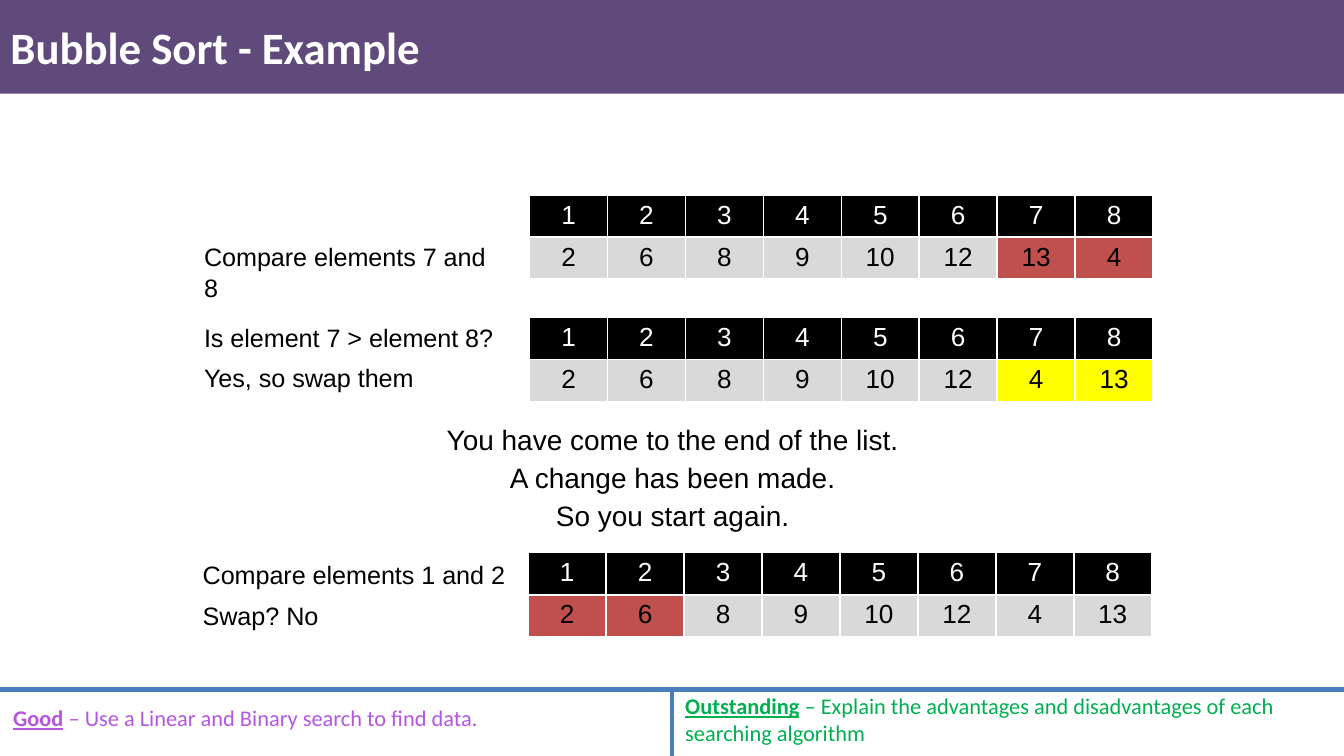
from dataclasses import dataclass

from lxml.etree import SubElement
from pptx import Presentation
from pptx.dml.color import RGBColor
from pptx.enum.shapes import MSO_CONNECTOR, MSO_SHAPE
from pptx.enum.text import MSO_ANCHOR, PP_ALIGN
from pptx.oxml.ns import qn
from pptx.slide import Slide
from pptx.table import _Cell
from pptx.text.text import Font
from pptx.util import Emu, Inches, Pt

SLIDE_WIDTH = Inches(10)
SLIDE_HEIGHT = Emu(SLIDE_WIDTH * 9 // 16)
COLUMN_SHARE, ROW_SHARE = 5.8, 5.45
BLACK, WHITE, GREY, RED, YELLOW = "000000", "FFFFFF", "D9D9D9", "C0504D", "FFFF00"
PURPLE, BLUE, VIOLET, GREEN = "604A7B", "4B7EBC", "B556E0", "00B050"


@dataclass
class Area:
    """A rectangle in percent of the slide's width and height."""

    left: float
    top: float
    width: float
    height: float

    def box(self) -> tuple[Emu, Emu, Emu, Emu]:
        """Return left, top, width and height as lengths."""
        return across(self.left), down(self.top), across(self.width), down(self.height)


@dataclass
class Label:
    """Text of one style, with one paragraph per line."""

    area: Area
    text: str
    size: float = 13.5
    font: str = "Arial"
    color: str = BLACK
    bold: bool = False
    align: PP_ALIGN = PP_ALIGN.LEFT
    anchor: MSO_ANCHOR = MSO_ANCHOR.TOP
    spacing: float = 1.0
    wrap: bool = True


@dataclass
class ListState:
    """The list at one step, with the highlighted positions."""

    left: float
    top: float
    values: list[int]
    marked: tuple[int, int]
    mark_color: str


@dataclass
class Objective:
    """A learning objective that opens with an emphasised grade."""

    area: Area
    grade: str
    text: str
    color: str


LABELS = [
    Label(Area(14.1, 54.4, 71.9, 17.1), "You have come to the end of the list.\n"
          "A change has been made.\nSo you start again.",
          size=15, align=PP_ALIGN.CENTER, spacing=1.14),
    Label(Area(-0.2, 1.4, 100, 9.4), "Bubble Sort - Example", size=24, font="Calibri",
          color=WHITE, bold=True, anchor=MSO_ANCHOR.MIDDLE),
    Label(Area(14.2, 31.1, 24.2, 10), "Compare elements 7 and 8"),
    Label(Area(14.2, 41.8, 24.4, 5.9), "Is element 7 > element 8?", wrap=False),
    Label(Area(14.2, 47.1, 17.8, 5.9), "Yes, so swap them", wrap=False),
    Label(Area(14.1, 73.1, 24.8, 5.9), "Compare elements 1 and 2", wrap=False),
    Label(Area(14.1, 78.6, 10.7, 5.9), "Swap? No", wrap=False),
]
STATES = [
    ListState(39.4, 25.8, [2, 6, 8, 9, 10, 12, 13, 4], (7, 8), RED),
    ListState(39.4, 42, [2, 6, 8, 9, 10, 12, 4, 13], (7, 8), YELLOW),
    ListState(39.3, 73.1, [2, 6, 8, 9, 10, 12, 4, 13], (1, 2), RED),
]
OBJECTIVES = [
    Objective(Area(0, 92.3, 49.2, 5.3), "Good",
              " – Use a Linear and Binary search to find data.", VIOLET),
    Objective(Area(50, 90.7, 48.8, 8.9), "Outstanding",
              " – Explain the advantages and disadvantages of each searching algorithm", GREEN),
]


def across(share: float) -> Emu:
    """Turn a percentage of the slide's width into a length."""
    return Emu(round(SLIDE_WIDTH * share / 100))


def down(share: float) -> Emu:
    """Turn a percentage of the slide's height into a length."""
    return Emu(round(SLIDE_HEIGHT * share / 100))


def rgb(color: str) -> RGBColor:
    """Turn a hex string into a colour."""
    return RGBColor.from_string(color)


def style(font: Font, name: str, size: float, color: str, bold: bool = False) -> None:
    """Set the typeface, size, colour and weight."""
    font.name, font.size, font.bold = name, Pt(size), bold
    font.color.rgb = rgb(color)


def draw_label(slide: Slide, label: Label) -> None:
    """Draw a text box whose paragraphs share one style."""
    frame = slide.shapes.add_textbox(*label.area.box()).text_frame
    frame.word_wrap, frame.vertical_anchor = label.wrap, label.anchor
    frame.text = label.text
    for paragraph in frame.paragraphs:
        paragraph.alignment, paragraph.line_spacing = label.align, label.spacing
        style(paragraph.runs[0].font, label.font, label.size, label.color, label.bold)


def draw_objective(slide: Slide, objective: Objective) -> None:
    """Draw an objective with its grade bold and underlined."""
    frame = slide.shapes.add_textbox(*objective.area.box()).text_frame
    frame.word_wrap = True
    for text, strong in ((objective.grade, True), (objective.text, False)):
        run = frame.paragraphs[0].add_run()
        run.text = text
        style(run.font, "Calibri", 12, objective.color, strong)
        run.font.underline = strong


def draw_rule(slide: Slide, start: tuple[float, float], end: tuple[float, float]) -> None:
    """Draw a footer rule between two points given in percent."""
    rule = slide.shapes.add_connector(
        MSO_CONNECTOR.STRAIGHT, across(start[0]), down(start[1]), across(end[0]), down(end[1]))
    rule.line.color.rgb, rule.line.width = rgb(BLUE), Pt(2.25)
    SubElement(rule.element.spPr, qn("a:effectLst"))


def fill_cell(cell: _Cell, value: int, fill: str, color: str) -> None:
    """Write a value into a cell with white borders."""
    cell.margin_left = cell.margin_right = Inches(0.07)
    cell.margin_top = cell.margin_bottom = Inches(0.04)
    for side in "LRTB":
        border = SubElement(cell._tc.get_or_add_tcPr(), qn(f"a:ln{side}"), w=str(Pt(1)))
        SubElement(SubElement(border, qn("a:solidFill")), qn("a:srgbClr"), val=WHITE)
    cell.fill.solid()
    cell.fill.fore_color.rgb = rgb(fill)
    cell.text_frame.text = str(value)
    paragraph = cell.text_frame.paragraphs[0]
    paragraph.alignment = PP_ALIGN.CENTER
    style(paragraph.runs[0].font, "Arial", 14, color)


def draw_state(slide: Slide, state: ListState) -> None:
    """Draw the positions above the list's values."""
    count = len(state.values)
    area = Area(state.left, state.top, count * COLUMN_SHARE, 2 * ROW_SHARE)
    table = slide.shapes.add_table(2, count, *area.box()).table
    table.first_row = table.horz_banding = False
    for position, value in enumerate(state.values, start=1):
        fill = state.mark_color if position in state.marked else GREY
        fill_cell(table.cell(0, position - 1), position, BLACK, WHITE)
        fill_cell(table.cell(1, position - 1), value, fill, BLACK)


def main() -> None:
    """Build and save the slide."""
    presentation = Presentation()
    presentation.slide_width, presentation.slide_height = SLIDE_WIDTH, SLIDE_HEIGHT
    slide = presentation.slides.add_slide(presentation.slide_layouts[6])
    for objective in OBJECTIVES:
        draw_objective(slide, objective)
    draw_rule(slide, (0, 91.2), (100, 91.2))
    draw_rule(slide, (50, 91.2), (50, 100))
    banner = slide.shapes.add_shape(MSO_SHAPE.RECTANGLE, *Area(0, 0, 100, 12.4).box())
    banner.shadow.inherit = False
    banner.fill.solid()
    banner.fill.fore_color.rgb = rgb(PURPLE)
    banner.line.fill.background()
    for state in STATES:
        draw_state(slide, state)
    for label in LABELS:
        draw_label(slide, label)
    presentation.save("out.pptx")


if __name__ == "__main__":
    main()
